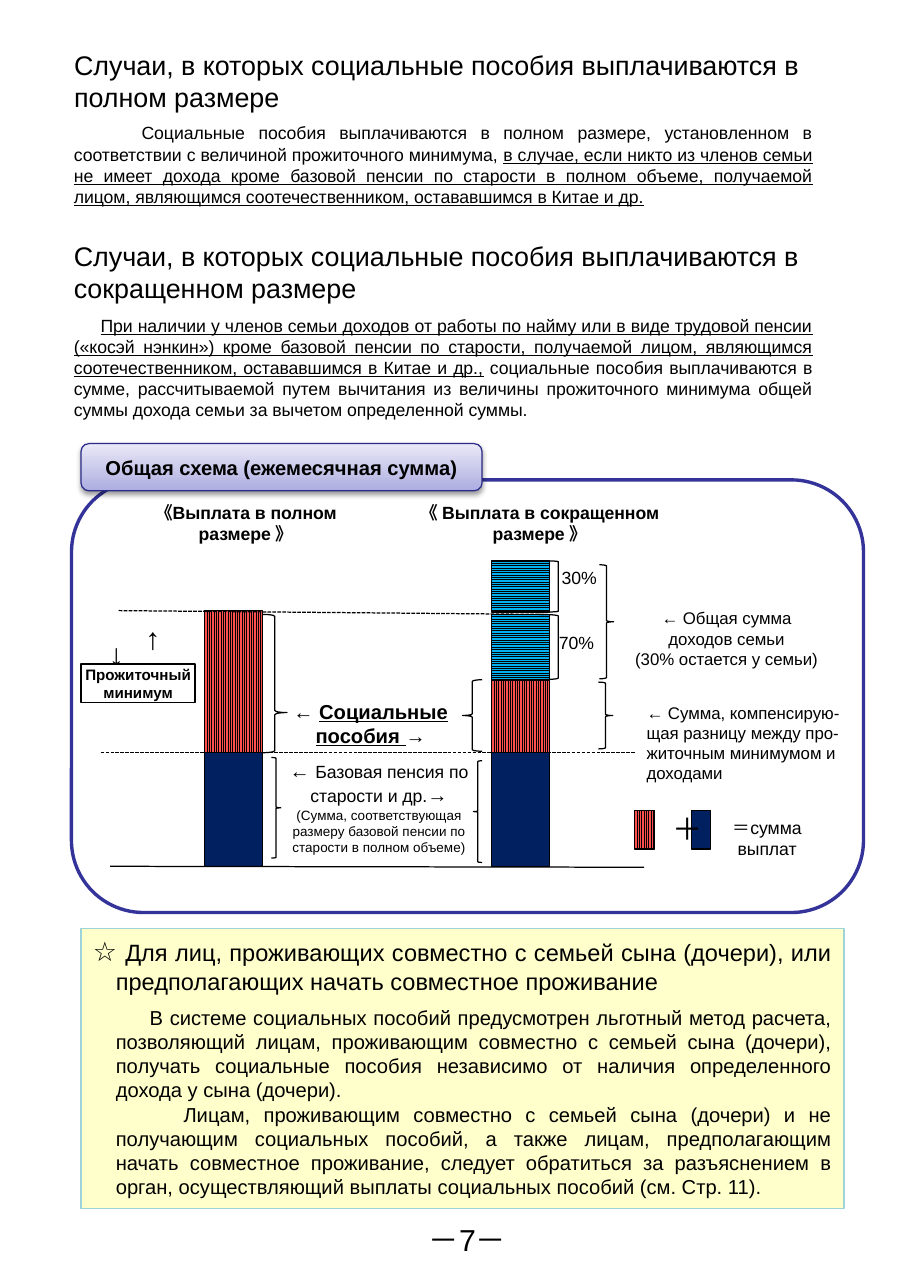
from dataclasses import dataclass
from lxml.etree import SubElement
from pptx import Presentation
from pptx.dml.color import RGBColor
from pptx.enum.dml import MSO_LINE, MSO_PATTERN
from pptx.enum.shapes import MSO_CONNECTOR, MSO_SHAPE
from pptx.enum.text import MSO_ANCHOR, PP_ALIGN
from pptx.oxml.ns import qn
from pptx.util import Cm, Pt


@dataclass(frozen=True)
class Theme:
    font: str = "Arial"
    asian: str = "Noto Sans CJK JP"
    ink: str = "000000"
    paper: str = "FFFFFF"
    navy: str = "002060"
    red: str = "FF5050"
    blue: str = "00B0F0"
    frame: str = "333399"
    edge: str = "2A2A89"
    dusk: str = "ADADE1"
    dawn: str = "E9E9F7"
    cream: str = "FFFFCC"
    mint: str = "9ED3D7"
    head: float = 16
    sub: float = 14
    large: float = 18
    label: float = 12
    body: float = 10.5
    note: float = 10
    small: float = 9
    tiny: float = 8


look = Theme()
rgb = RGBColor.from_string
LEFT, MID, JUST = PP_ALIGN.LEFT, PP_ALIGN.CENTER, PP_ALIGN.JUSTIFY

deck = Presentation()
deck.slide_width, deck.slide_height = Cm(19), Cm(27)
slide = deck.slides.add_slide(deck.slide_layouts[5])
shapes = slide.shapes


def draw(kind, box, fill=None, line=look.ink, width=0.75):
    """Add a preset shape, or a text box when kind is None; box is in cm."""
    place = [Cm(side) for side in box]
    if kind is None:
        item = shapes.add_textbox(*place)
        item.text_frame.word_wrap = True
        return item
    item = shapes.add_shape(kind, *place)
    item.shadow.inherit = False
    item.line.color.rgb = rgb(line)
    item.line.width = Pt(width)
    if fill in (look.red, look.blue):
        item.fill.patterned()
        item.fill.pattern = (MSO_PATTERN.LIGHT_VERTICAL if fill == look.red
                             else MSO_PATTERN.LIGHT_HORIZONTAL)
        item.fill.fore_color.rgb = rgb(look.ink)
        item.fill.back_color.rgb = rgb(fill)
    elif fill:
        item.fill.solid()
        item.fill.fore_color.rgb = rgb(fill)
    else:
        item.fill.background()
    return item


def write(item, align, *paras):
    """Fill a shape; a run is (text, size, marks), marks being b and u."""
    frame = item.text_frame
    for n, runs in enumerate(paras):
        para = frame.add_paragraph() if n else frame.paragraphs[0]
        para.alignment = align
        for text, size, marks in runs:
            run = para.add_run()
            run.text = text
            font = run.font
            font.name, font.size = look.font, Pt(size)
            font.bold, font.underline = "b" in marks, "u" in marks
            font.color.rgb = rgb(look.ink)
            SubElement(font._element, qn("a:ea"), typeface=look.asian)
    return frame


# Headings and text
title = shapes.title
title.left, title.top, title.width, title.height = Cm(1.3), Cm(0.89), Cm(16), Cm(1.55)
frame = write(title, LEFT, [
    ("Случаи, в которых социальные пособия выплачиваются в полном размере", look.head, "")])
frame.vertical_anchor = MSO_ANCHOR.TOP

frame = write(draw(None, (1.3, 2.44, 16, 2.1)), JUST, [
    ("Социальные пособия выплачиваются в полном размере, установленном в соответствии "
     "с величиной прожиточного минимума, ", look.body, ""),
    ("в случае, если никто из членов семьи не имеет дохода кроме базовой пенсии по старости "
     "в полном объеме, получаемой лицом, являющимся соотечественником, остававшимся "
     "в Китае и др.", look.body, "u")])
frame.paragraphs[0]._p.get_or_add_pPr().set("indent", str(Cm(1.42)))

frame = write(
    draw(None, (1.3, 4.9, 16, 4.1)), JUST,
    [("Случаи, в которых социальные пособия выплачиваются в сокращенном размере",
      look.head, "")],
    [("При наличии у членов семьи доходов от работы по найму или в виде трудовой пенсии "
      "(«косэй нэнкин») кроме базовой пенсии по старости, получаемой лицом, являющимся "
      "соотечественником, остававшимся в Китае и др.,", look.body, "u"),
     (" социальные пособия выплачиваются в сумме, рассчитываемой путем вычитания из величины "
      "прожиточного минимума общей суммы дохода семьи за вычетом определенной суммы.",
      look.body, "")])
first, second = frame.paragraphs
first.alignment = LEFT
second.space_before = Pt(6)
second._p.get_or_add_pPr().set("indent", str(Cm(0.56)))

# Advice panel
frame = write(
    draw(MSO_SHAPE.RECTANGLE, (1.7, 19.46, 16, 5.87), look.cream, look.mint), JUST,
    [("☆ ", look.head, "b"),
     ("Для лиц, проживающих совместно с семьей сына (дочери), или предполагающих начать "
      "совместное проживание", look.sub, "")],
    [("В системе социальных пособий предусмотрен льготный метод расчета, позволяющий лицам, "
      "проживающим совместно с семьей сына (дочери), получать социальные пособия независимо "
      "от наличия определенного дохода у сына (дочери).", look.label, "")],
    [("Лицам, проживающим совместно с семьей сына (дочери) и не получающим социальных "
      "пособий, а также лицам, предполагающим начать совместное проживание, следует "
      "обратиться за разъяснением в орган, осуществляющий выплаты социальных пособий "
      "(см. Стр. 11).", look.label, "")])
frame.vertical_anchor = MSO_ANCHOR.TOP
frame.paragraphs[0].space_after = Pt(6)
for para, indent in zip(frame.paragraphs, (-0.48, 0.71, 1.42)):
    props = para._p.get_or_add_pPr()
    props.set("marL", str(Cm(0.48)))
    props.set("indent", str(Cm(indent)))

# Scheme frame and its label
draw(MSO_SHAPE.ROUNDED_RECTANGLE, (1.5, 10.06, 16.61, 9.07), look.paper, look.frame, 2)
label = draw(MSO_SHAPE.ROUNDED_RECTANGLE, (1.7, 9.3, 8.41, 0.99), look.dawn, look.edge)
label.fill.gradient()
label.fill.gradient_angle = 90
for stop, tone in zip(label.fill.gradient_stops, (look.dusk, look.dawn)):
    stop.color.rgb = rgb(tone)
effects = label._element.spPr.find(qn("a:effectLst"))
shadow = SubElement(effects, qn("a:outerShdw"), blurRad=str(Pt(3.1)),
                    dist=str(Pt(1.6)), dir="5400000", rotWithShape="0")
tone = SubElement(shadow, qn("a:srgbClr"), val=look.ink)
SubElement(tone, qn("a:alpha"), val="38000")
write(label, MID, [("Общая схема (ежемесячная сумма)", look.label, "b")])

# Bars and sum key
full, part, wide = 4.29, 10.31, 1.22
for box, fill in (
        ((full, 12.8, wide, 2.97), look.red), ((part, 14.25, wide, 1.52), look.red),
        ((full, 15.77, wide, 2.39), look.navy), ((part, 15.77, wide, 2.39), look.navy),
        ((part, 12.88, wide, 1.37), look.blue), ((part, 11.76, wide, 1.07), look.blue),
        ((13.31, 16.99, 0.41, 0.81), look.red), ((14.5, 16.99, 0.41, 0.81), look.navy)):
    draw(MSO_SHAPE.RECTANGLE, box, fill)

# Base line and level lines
for *ends, dash in ((2.31, 18.16, 13.51, 18.18, False),
                    (2.49, 12.8, 11.46, 12.88, True),
                    (2.11, 15.77, 13.31, 15.77, True)):
    rule = shapes.add_connector(MSO_CONNECTOR.STRAIGHT, *[Cm(end) for end in ends])
    rule.line.color.rgb = rgb(look.ink)
    rule.line.width = Pt(0.75)
    if dash:
        rule.line.dash_style = MSO_LINE.SQUARE_DOT
    SubElement(rule._element.spPr, qn("a:effectLst"))

# Braces and brackets
for kind, box in (
        (MSO_SHAPE.RIGHT_BRACE, (5.69, 15.88, 0.2, 2.11)),
        (MSO_SHAPE.LEFT_BRACE, (9.93, 15.95, 0.18, 2.13)),
        (MSO_SHAPE.LEFT_BRACE, (9.7, 14.25, 0.41, 1.5)),
        (MSO_SHAPE.RIGHT_BRACE, (12.57, 11.84, 0.3, 2.39)),
        (MSO_SHAPE.RIGHT_BRACE, (12.55, 14.3, 0.3, 1.4)),
        (MSO_SHAPE.RIGHT_BRACKET, (11.51, 11.76, 0.2, 1.07)),
        (MSO_SHAPE.RIGHT_BRACKET, (11.3, 12.88, 0.41, 1.37))):
    draw(kind, box)
brace = draw(MSO_SHAPE.RIGHT_BRACE, (5.51, 12.88, 0.51, 2.9))
brace.adjustments[1] = 0.71

# Scheme captions
for box, align, *paras in (
        ((2.62, 10.39, 5.08, 1.1), MID, [("《Выплата в полном размере 》", look.body, "b")]),
        ((8.4, 10.39, 5.85, 1.1), MID, [("《 Выплата в сокращенном размере 》", look.body, "b")]),
        ((12.57, 12.62, 5.33, 1.5), MID, [("← Общая сумма", look.note, "")],
         [("доходов семьи", look.note, "")], [("(30% остается у семьи)", look.note, "")]),
        ((13.31, 14.6, 4.6, 1.96), LEFT,
         [("← Сумма, компенсирую- щая разницу между про- житочным минимумом и доходами",
           look.note, "")]),
        ((5.11, 14.53, 5.33, 1.2), MID, [("← ", look.label, ""),
         ("Социальные пособия ", look.label, "bu"), ("→", look.label, "")]),
        ((5.69, 15.77, 4.52, 2.26), MID,
         [("← ", look.label, ""), ("Базовая пенсия по старости и др.", look.body, ""),
          ("→", look.label, "")],
         [("(Сумма, соответствующая размеру базовой пенсии по старости в полном объеме)",
           look.tiny, "")]),
        ((11.53, 11.76, 1.65, 0.69), LEFT, [("30%", look.body, "")]),
        ((9.73, 13.13, 4.72, 0.69), MID, [("70%", look.body, "")]),
        ((8.51, 25.48, 2.59, 1.02), MID, [("－7－", look.large, "")])):
    write(draw(None, box), align, *paras)

for box, inset, text, size in (((13.69, 16.87, 0.79, 0.94), 0.41, "＋", look.large),
                               ((15.11, 16.99, 2.21, 1.14), 0, "＝сумма выплат", look.body)):
    frame = write(draw(None, box), MID, [(text, size, "")])
    frame.margin_left = Cm(inset)

# Living-cost level, its arrows set in upright columns
frame = write(draw(None, (2.16, 12.88, 1.7, 3.28)), LEFT,
              [("←", look.large, "")], [("→", look.large, "b")])
frame._txBody.bodyPr.set("vert", "eaVert")
frame.paragraphs[1]._p.get_or_add_pPr().set("marL", str(Cm(0.35)))
level = draw(MSO_SHAPE.RECTANGLE, (1.7, 13.92, 2.39, 0.81), look.paper)
frame = write(level, MID, [("Прожиточный", look.small, "b")], [("минимум", look.small, "b")])
frame.word_wrap = False

deck.save("out.pptx")
